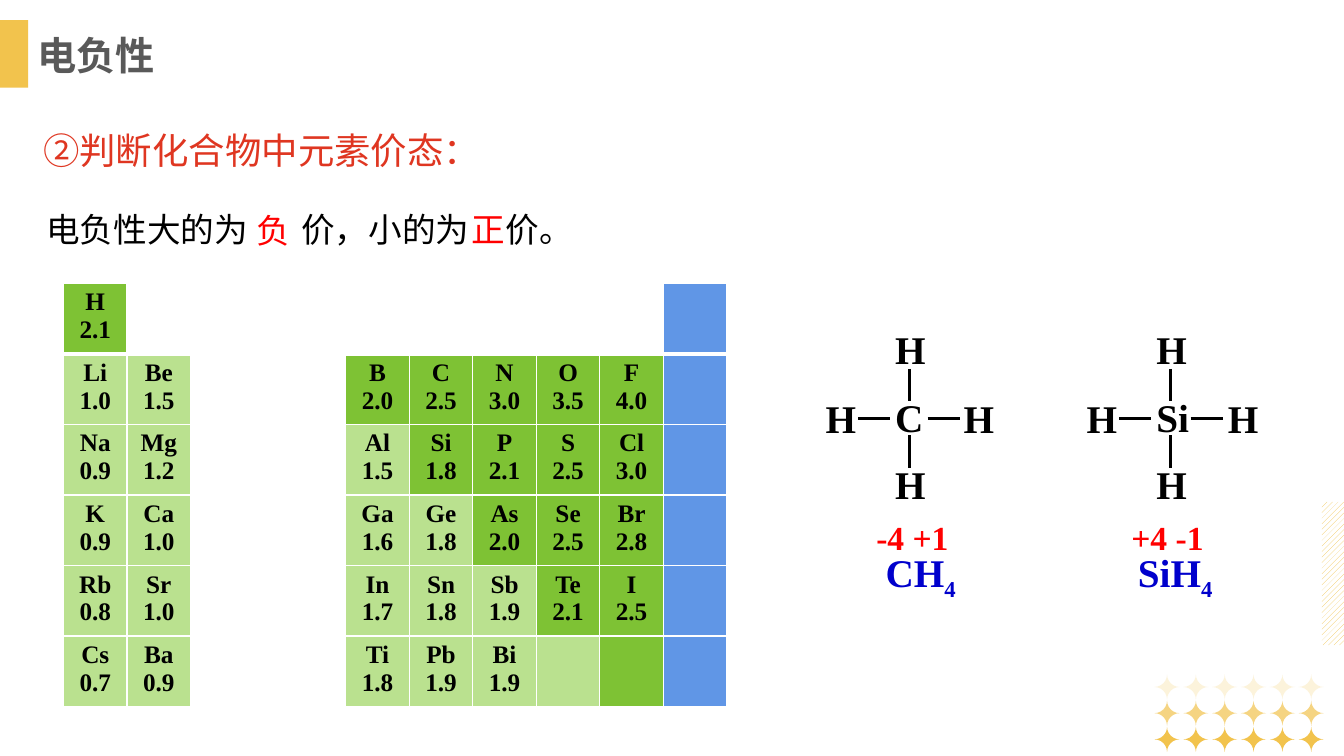
from dataclasses import dataclass

from lxml.etree import SubElement as Sub
from pptx import Presentation
from pptx.dml.color import RGBColor as Rgb
from pptx.enum.dml import MSO_PATTERN as Pat
from pptx.enum.shapes import MSO_CONNECTOR as Con, MSO_SHAPE as Shp
from pptx.enum.text import PP_ALIGN as Al
from pptx.oxml.ns import qn
from pptx.util import Inches, Pt

GOLD = Rgb(0xF2, 0xC3, 0x4D)
WHITE = Rgb(0xFF, 0xFF, 0xFF)
BLACK = Rgb(0, 0, 0)
GREY = Rgb(0x59, 0x59, 0x59)
BRICK = Rgb(0xDF, 0x36, 0x21)
RED = Rgb(0xFF, 0, 0)
NAVY = Rgb(0, 0, 0xCC)
GREEN = Rgb(0x7E, 0xC2, 0x34)
PALE = Rgb(0xBA, 0xE1, 0x8F)
BLUE = Rgb(0x60, 0x96, 0xE6)
TIMES = "Times New Roman"
NOTO = "Noto Sans CJK SC"


@dataclass
class Style:
    size: float
    color: Rgb = BLACK
    bold: bool = False
    face: str = TIMES


@dataclass
class Span:
    text: str
    line: bool = False
    sub: bool = False


@dataclass
class Label:
    left: float
    top: float
    width: float
    height: float
    style: Style
    spans: list[Span]
    align: Al = Al.LEFT
    wrap: bool = True
    tabs: tuple[float, ...] = ()


@dataclass
class Mol:
    left: float
    atom: str
    bond: float
    right: float


ATOM = Style(28, BOLD := BLACK, True)
CELL = Style(18, BLACK, True)
SIGN = Style(24, RED, True)
NAME = Style(28, NAVY, True)
BODY = Style(24, face=NOTO)
FILL = Style(24, RED, face=NOTO)

LABELS = [
    Label(0.33, 1.22, 5.06, 0.57, Style(26, BRICK), [Span("②判断化合物中元素价态：")]),
    Label(0.36, 2.02, 7.09, 0.5, BODY,
          [Span("电负性大的为"), Span("\t", line=True), Span("价，小的为"),
           Span("\t", line=True), Span("价。")], tabs=(2.53, 4.56)),
    Label(2.45, 2.03, 0.81, 0.5, FILL, [Span("负")]),
    Label(4.58, 2.02, 0.81, 0.5, FILL, [Span("正")]),
    Label(8.67, 5.39, 0.92, 0.57, NAME, [Span("CH"), Span("4", sub=True)], Al.CENTER, False),
    Label(11.1, 5.39, 1.11, 0.57, NAME, [Span("SiH"), Span("4", sub=True)], Al.CENTER),
    Label(8.5, 5.08, 1.1, 0.5, SIGN, [Span("-4 +1")], Al.CENTER),
    Label(11.03, 5.08, 1.1, 0.5, SIGN, [Span("+4 -1")], Al.CENTER),
    Label(0.27, 0.26, 1.37, 0.57, Style(28, GREY, True, "Arial"), [Span("电负性")], wrap=False),
]
MOLS = [Mol(8.09, "C", 1.11, 1.37), Mol(10.68, "Si", 1.13, 1.4)]

ROWS = [
    ["H 2.1"] + [""] * 8,
    ["Li 1.0", "Be 1.5", "", "B 2.0", "C 2.5", "N 3.0", "O 3.5", "F 4.0", ""],
    ["Na 0.9", "Mg 1.2", "", "Al 1.5", "Si 1.8", "P 2.1", "S 2.5", "Cl 3.0", ""],
    ["K 0.9", "Ca 1.0", "", "Ga 1.6", "Ge 1.8", "As 2.0", "Se 2.5", "Br 2.8", ""],
    ["Rb 0.8", "Sr 1.0", "", "In 1.7", "Sn 1.8", "Sb 1.9", "Te 2.1", "I 2.5", ""],
    ["Cs 0.7", "Ba 0.9", "", "Ti 1.8", "Pb 1.9", "Bi 1.9", "", "", ""],
]
TINTS = ["G-------B", "LL-GGGGGB", "LL-LGGGGB", "LL-LLGGGB", "LL-LLLGGB", "LL-LLLLGB"]
HUES = {"G": GREEN, "L": PALE, "B": BLUE}


def add_run(para, span: Span, style: Style) -> None:
    run = para.add_run()
    run.text = span.text
    font = run.font
    font.size, font.bold = Pt(style.size), style.bold
    font.color.rgb = style.color
    font.name = style.face
    props = run._r.get_or_add_rPr()
    Sub(props, qn("a:ea")).set("typeface", NOTO)
    if span.line:
        font.underline = True
    if span.sub:
        props.set("baseline", "-25000")


def add_label(slide, item: Label) -> None:
    box = slide.shapes.add_textbox(*map(Inches, (item.left, item.top, item.width, item.height)))
    box.text_frame.word_wrap = item.wrap
    para = box.text_frame.paragraphs[0]
    para.alignment = item.align
    if item.tabs:
        stops = Sub(para._p.get_or_add_pPr(), qn("a:tabLst"))
        for pos in item.tabs:
            stop = Sub(stops, qn("a:tab"))
            stop.set("pos", str(Inches(pos)))
            stop.set("algn", "l")
    for span in item.spans:
        add_run(para, span, item.style)


def add_block(slide, kind: Shp, left: float, top: float, width: float, height: float):
    shape = slide.shapes.add_shape(kind, *map(Inches, (left, top, width, height)))
    shape.shadow.inherit = False
    shape.line.fill.background()
    shape.fill.solid()
    shape.fill.fore_color.rgb = GOLD
    return shape


def add_decor(slide) -> None:
    add_block(slide, Shp.RECTANGLE, 0, 0.2, 0.28, 0.67)
    hatch = add_block(slide, Shp.RECTANGLE, 13.11, 4.98, 0.22, 1.42).fill
    hatch.patterned()
    hatch.pattern = Pat.WIDE_UPWARD_DIAGONAL
    hatch.fore_color.rgb, hatch.back_color.rgb = GOLD, WHITE
    for row, alpha in enumerate((20, 70, 100)):
        for col in range(6):
            star = add_block(slide, Shp.PLAQUE, 11.45 + 0.286 * col, 6.69 + 0.26 * row, 0.25, 0.25)
            star.adjustments[0] = 0.5
            if alpha < 100:
                tone = star._element.spPr.find(".//" + qn("a:srgbClr"))
                Sub(tone, qn("a:alpha")).set("val", str(alpha * 1000))


def add_edges(cell, top: float, base: float) -> None:
    props = cell._tc.get_or_add_tcPr()
    sides = (("L", 1), ("R", 1), ("T", top), ("B", base))
    for index, (side, width) in enumerate(sides):
        edge = Sub(props, qn(f"a:ln{side}"))
        edge.set("w", str(Pt(width)))
        Sub(Sub(edge, qn("a:solidFill")), qn("a:srgbClr")).set("val", str(WHITE))
        props.insert(index, edge)


def add_grid(slide) -> None:
    frame = slide.shapes.add_table(6, 9, *map(Inches, (0.63, 2.81, 6.58, 4.2)))
    table = frame.table
    table.first_row = table.horz_banding = False
    for col, item in enumerate(table.columns):
        item.width = Inches(1.54 if col == 2 else 0.63)
    for row, texts in enumerate(ROWS):
        table.rows[row].height = Inches(0.7)
        for col, text in enumerate(texts):
            cell = table.cell(row, col)
            hue = HUES.get(TINTS[row][col])
            if hue:
                cell.fill.solid()
                cell.fill.fore_color.rgb = hue
            else:
                cell.fill.background()
            add_edges(cell, 3 if row == 1 else 1, 3 if row == 0 else 1)
            for index, part in enumerate(text.split()):
                body = cell.text_frame
                para = body.add_paragraph() if index else body.paragraphs[0]
                para.alignment = Al.CENTER
                add_run(para, Span(part), CELL)
    table.cell(0, 1).merge(table.cell(0, 7))
    table.cell(3, 2).merge(table.cell(5, 2))


def add_bond(slide, left: float, top: float, right: float, base: float) -> None:
    bond = slide.shapes.add_connector(Con.STRAIGHT, *map(Inches, (left, top, right, base)))
    bond.line.color.rgb = BLACK
    bond.line.width = Pt(2.25)
    Sub(bond._element.spPr, qn("a:effectLst"))


def add_mol(slide, mol: Mol) -> None:
    mid = mol.left + 0.69
    add_label(slide, Label(mid, 3.85, 0.85, 0.57, ATOM, [Span(mol.atom)]))
    for left, top in ((mol.left, 3.86), (mol.left + mol.right, 3.86), (mid, 3.18), (mid, 4.52)):
        add_label(slide, Label(left, top, 0.48, 0.57, ATOM, [Span("H")]))
    for start in (mol.left + 0.42, mol.left + mol.bond):
        add_bond(slide, start, 4.15, start + 0.32, 4.15)
    for top in (3.66, 4.32):
        add_bond(slide, mol.left + 0.93, top, mol.left + 0.93, top + 0.32)


def main() -> None:
    deck = Presentation()
    deck.slide_width, deck.slide_height = Inches(13.33), Inches(7.5)
    slide = deck.slides.add_slide(deck.slide_layouts[6])
    add_decor(slide)
    add_grid(slide)
    for mol in MOLS:
        add_mol(slide, mol)
    for item in LABELS:
        add_label(slide, item)
    deck.save("out.pptx")


if __name__ == "__main__":
    main()
